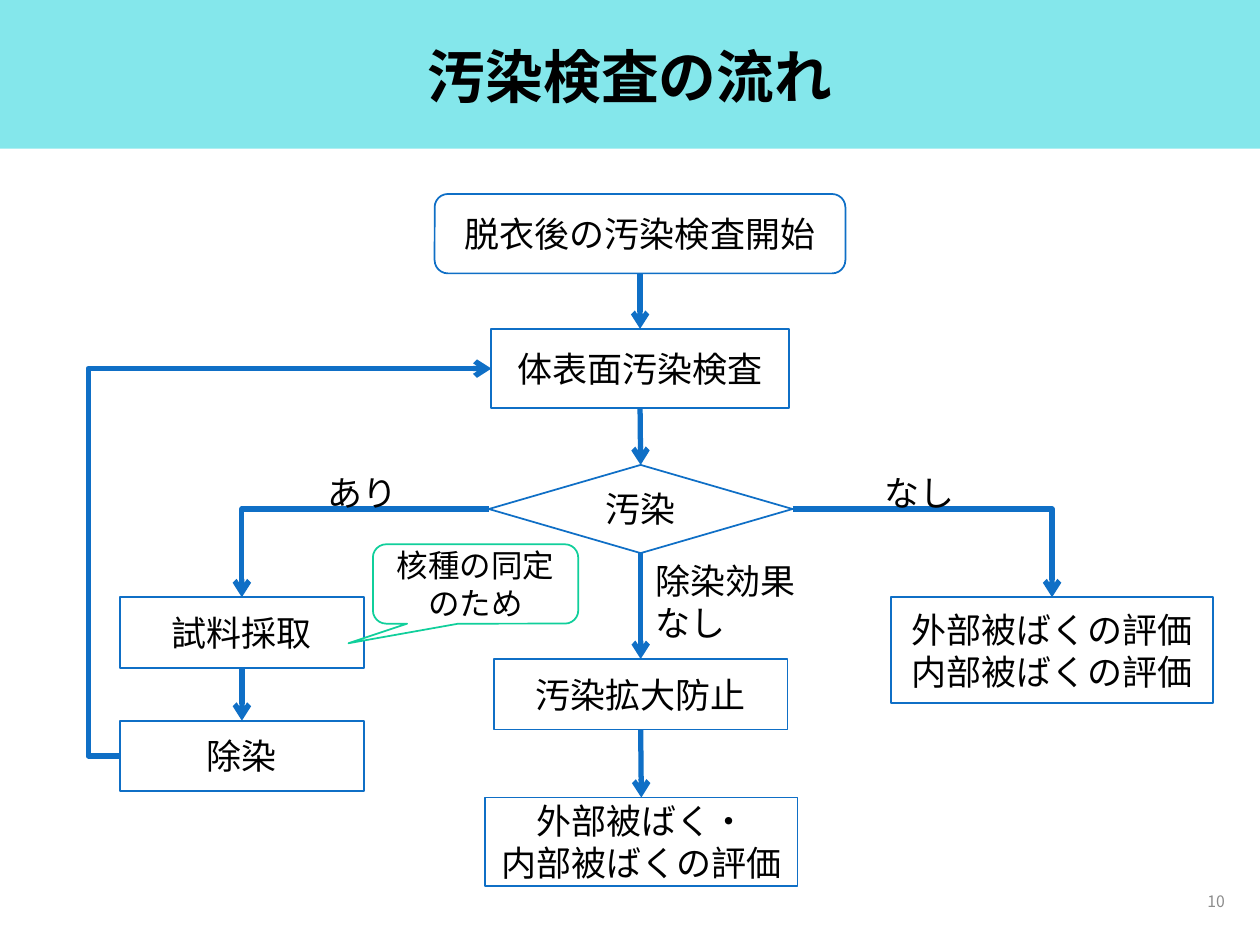
"""Build a one-slide flow chart of contamination screening."""
from lxml.etree import SubElement
from pptx import Presentation
from pptx.dml.color import RGBColor
from pptx.enum.shapes import MSO_CONNECTOR as LINK, MSO_SHAPE as SHAPE
from pptx.enum.text import MSO_ANCHOR as ANCHOR, MSO_AUTO_SIZE as SIZE, PP_ALIGN as ALIGN
from pptx.oxml.ns import qn
from pptx.util import Inches, Pt

THEME = {
    "band": "0BD0D9", "line": "0F6FC6", "note": "10CF9B", "fill": "FFFFFF",
    "ink": "000000", "grey": "8C8C8C", "body": "Arial", "head": "Noto Sans CJK JP",
    "title": 33, "text": 20, "small": 18, "page": 9, "thin": 1, "thick": 3,
}
TITLE = ("汚染検査の流れ", (0.69, 0.21, 8.62, 0.85))
BAND = (0, 0, 10, 1.18)
PAGE = ("10", (7.57, 6.95, 2.25, 0.4))
STEP = SHAPE.FLOWCHART_PROCESS
NODES = {
    "start": (SHAPE.FLOWCHART_ALTERNATE_PROCESS, (3.45, 1.54, 3.26, 0.63), ["脱衣後の汚染検査開始"]),
    "scan": (STEP, (3.9, 2.61, 2.36, 0.63), ["体表面汚染検査"]),
    "check": (SHAPE.FLOWCHART_DECISION, (3.88, 3.69, 2.41, 0.7), ["汚染"]),
    "sample": (STEP, (0.95, 4.74, 1.94, 0.56), ["試料採取"]),
    "clean": (STEP, (0.95, 5.72, 1.94, 0.56), ["除染"]),
    "contain": (STEP, (3.92, 5.23, 2.33, 0.56), ["汚染拡大防止"]),
    "assess": (STEP, (3.85, 6.33, 2.48, 0.7), ["外部被ばく・", "内部被ばくの評価"]),
    "clear": (STEP, (7.07, 4.74, 2.56, 0.84), ["外部被ばくの評価", "内部被ばくの評価"]),
}
NOTE = ("核種の同定のため", (2.96, 4.32, 1.63, 0.63), (-0.619, 0.747, 0.167))
LABELS = [
    ("あり", (2.5, 3.69, 0.76, 0.44), False),
    ("なし", (6.92, 3.69, 0.76, 0.44), False),
    ("除染効果なし", (5.1, 4.39, 1.32, 0.77), True),
]
TOP, LEFT, BOTTOM, RIGHT = range(4)
LINKS = [
    ("start", BOTTOM, "scan", TOP, "line"),
    ("scan", BOTTOM, "check", TOP, "line"),
    ("check", LEFT, "sample", TOP, "bentConnector2"),
    ("check", RIGHT, "clear", TOP, "bentConnector2"),
    ("sample", BOTTOM, "clean", TOP, "line"),
    ("check", BOTTOM, "contain", TOP, "line"),
    ("contain", BOTTOM, "assess", TOP, "line"),
    ("clean", LEFT, "scan", LEFT, "bentConnector3"),
]
LOOP = -0.085


def color(name):
    return RGBColor.from_string(THEME[name])


def place(shape, box):
    for key, val in zip(("left", "top", "width", "height"), box):
        setattr(shape, key, Inches(val))


def write(shape, lines, size="text", face="body", ink="ink", bold=False,
          align=ALIGN.CENTER, anchor=ANCHOR.MIDDLE, wrap=True, space=None):
    frame = shape.text_frame
    frame.text = "\n".join(lines)
    for key, val in {"word_wrap": wrap, "auto_size": SIZE.NONE, "vertical_anchor": anchor}.items():
        setattr(frame, key, val)
    look = {"name": THEME[face], "size": Pt(THEME[size]), "bold": bold}
    for para in frame.paragraphs:
        para.alignment, para.line_spacing = align, space
        for run in para.runs:
            for key, val in look.items():
                setattr(run.font, key, val)
            run.font.color.rgb = color(ink)
            SubElement(run.font._element, qn("a:ea"), typeface=THEME[face])


def draw(slide, kind, box, fill="fill", line="line"):
    shape = slide.shapes.add_shape(kind, *map(Inches, box))
    shape.shadow.inherit = False
    shape.fill.solid()
    shape.fill.fore_color.rgb = color(fill)
    if line:
        shape.line.color.rgb = color(line)
        shape.line.width = Pt(THEME["thin"])
    else:
        shape.line.fill.background()
    return shape


def label(slide, text, box, **look):
    write(slide.shapes.add_textbox(*map(Inches, box)), [text], **look)


def site(shape, side):
    mid, half = shape.left + shape.width // 2, shape.top + shape.height // 2
    return {TOP: (mid, shape.top), LEFT: (shape.left, half),
            BOTTOM: (mid, shape.top + shape.height),
            RIGHT: (shape.left + shape.width, half)}[side]


def join(slide, nodes, src, out, dst, into, form):
    kind = LINK.STRAIGHT if form == "line" else LINK.ELBOW
    link = slide.shapes.add_connector(kind, *site(nodes[src], out), *site(nodes[dst], into))
    link.begin_connect(nodes[src], out)
    link.end_connect(nodes[dst], into)
    link.line.color.rgb = color("line")
    link.line.width = Pt(THEME["thick"])
    props = link._element.spPr
    SubElement(props.find(qn("a:ln")), qn("a:tailEnd"), type="arrow")
    SubElement(props, qn("a:effectLst"))
    if form != "line":
        geom = props.find(qn("a:prstGeom"))
        geom.set("prst", form)
        if form == "bentConnector3":
            SubElement(geom.find(qn("a:avLst")), qn("a:gd"), name="adj1",
                       fmla=f"val {round(LOOP * 100000)}")


def main():
    deck = Presentation()
    deck.slide_width, deck.slide_height = Inches(10), Inches(7.5)
    slide = deck.slides.add_slide(deck.slide_layouts[5])
    band = draw(slide, SHAPE.RECTANGLE, BAND, "band", None)
    tint = band._element.spPr.find(qn("a:solidFill"))[0]
    SubElement(tint, qn("a:alpha"), val="50000")
    title = slide.shapes.title
    title._element.addprevious(band._element)
    place(title, TITLE[1])
    write(title, [TITLE[0]], size="title", face="head", bold=True, space=0.9)

    nodes = {}
    for name, (kind, box, lines) in NODES.items():
        nodes[name] = draw(slide, kind, box)
        write(nodes[name], lines)
    for link in LINKS:
        join(slide, nodes, *link)
    text, box, bends = NOTE
    note = draw(slide, SHAPE.ROUNDED_RECTANGULAR_CALLOUT, box, line="note")
    for i, bend in enumerate(bends):
        note.adjustments[i] = bend
    write(note, [text], size="small")
    for text, box, wrap in LABELS:
        label(slide, text, box, align=ALIGN.LEFT, anchor=ANCHOR.TOP, wrap=wrap)
    label(slide, *PAGE, size="page", face="head", ink="grey", align=ALIGN.RIGHT)
    deck.save("out.pptx")


if __name__ == "__main__":
    main()
